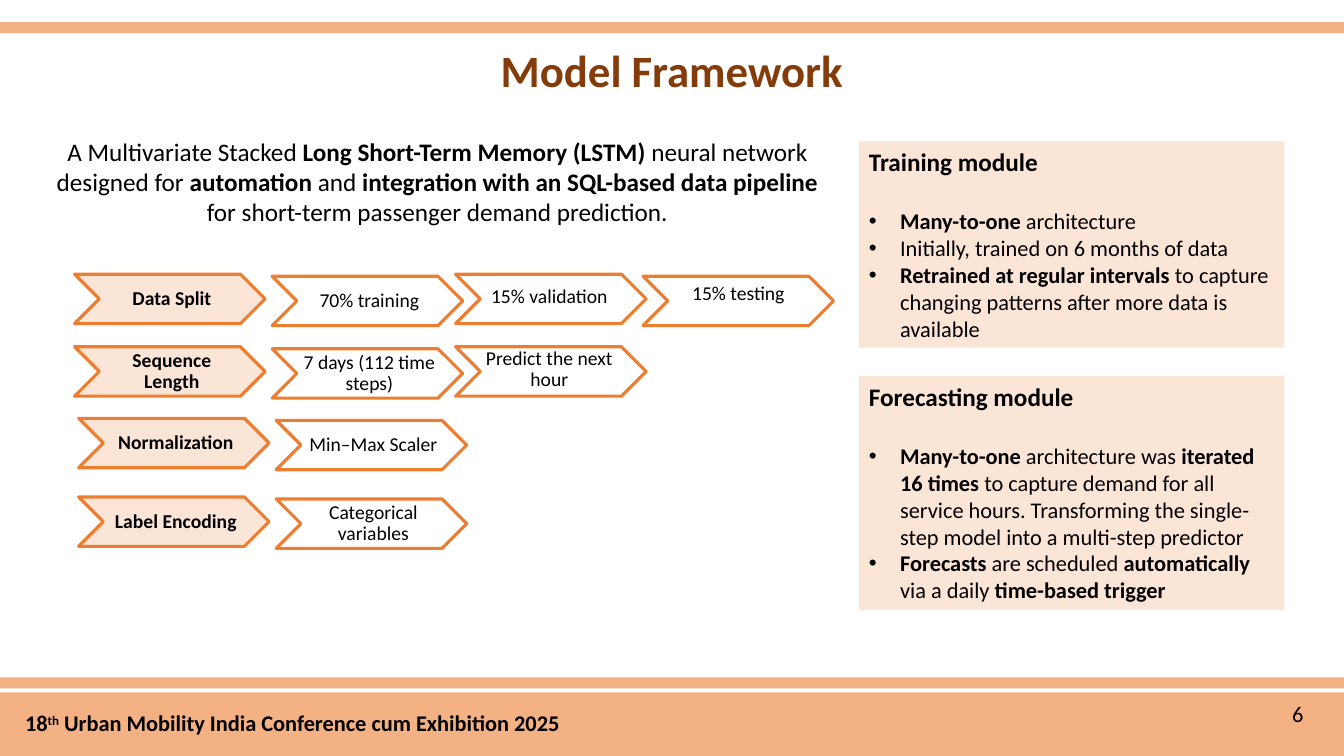
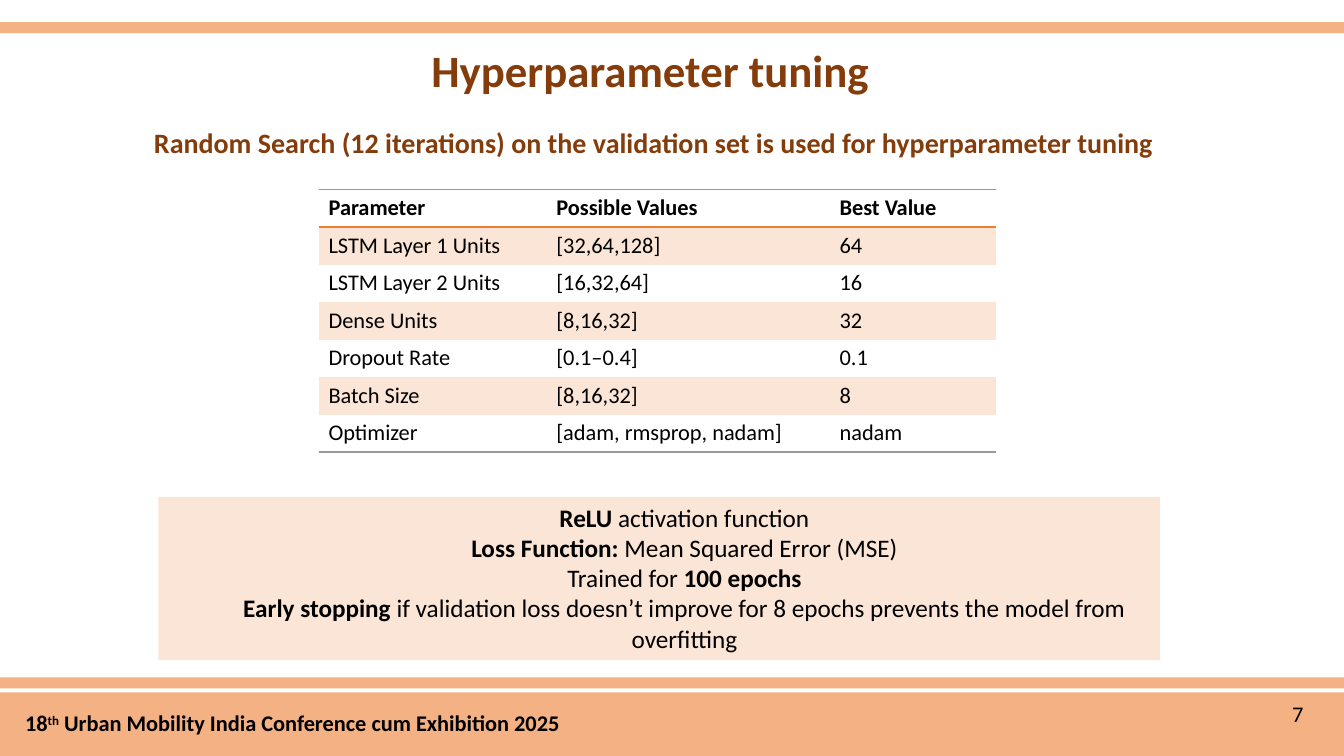
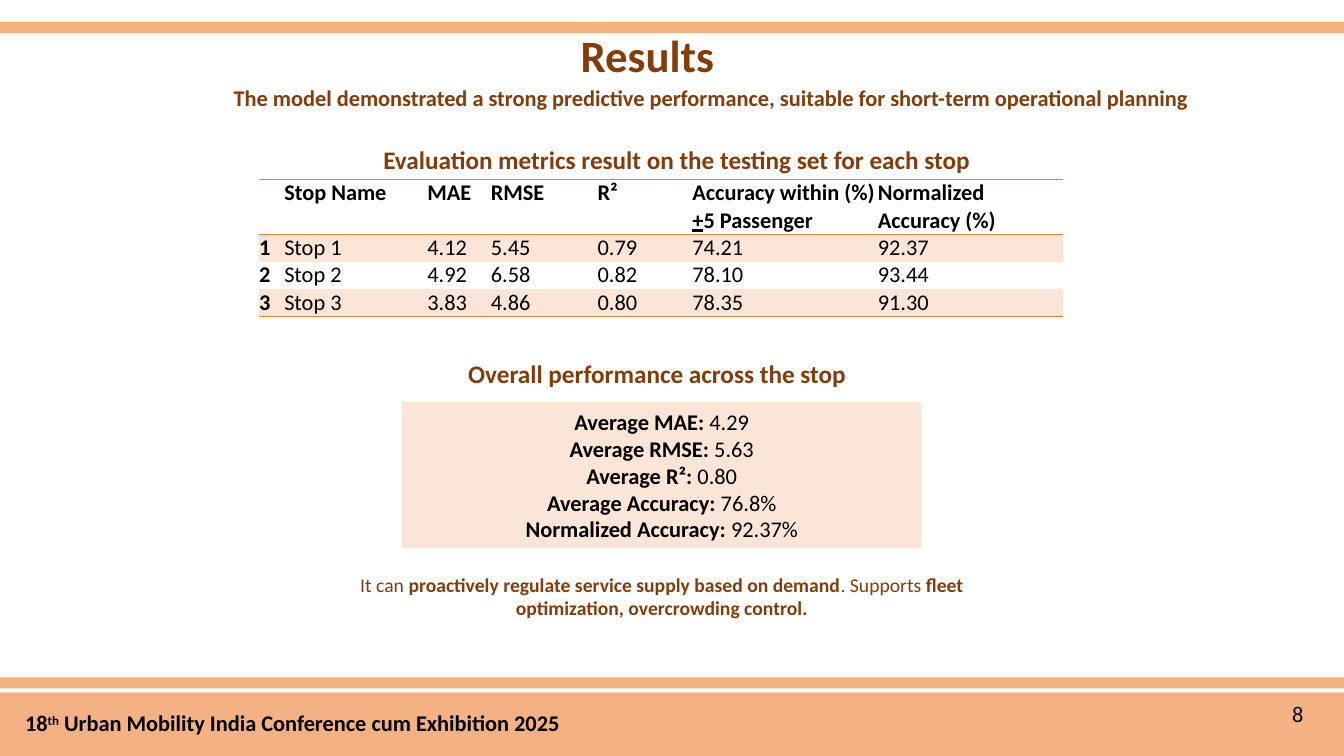
from dataclasses import dataclass
from itertools import groupby

from lxml.etree import SubElement
from pptx import Presentation
from pptx.dml.color import RGBColor
from pptx.enum.shapes import MSO_SHAPE
from pptx.enum.text import MSO_ANCHOR, MSO_AUTO_SIZE, PP_ALIGN
from pptx.oxml.ns import qn
from pptx.util import Emu, Pt

SCALE = 9144
PLAIN_GRID = "{2D5ABB26-0587-4C30-8999-92F81FD0307C}"
LEFT, MID = PP_ALIGN.LEFT, PP_ALIGN.CENTER
TOP, HALF = MSO_ANCHOR.TOP, MSO_ANCHOR.MIDDLE
INSET = (10, 5, 10, 5)


@dataclass(frozen=True)
class Theme:
    font: str = "Calibri"
    ink: str = "000000"
    brown: str = "843C0B"
    orange: str = "ED7D31"
    band: str = "F4B183"
    pale: str = "FBE5D6"
    white: str = "FFFFFF"
    gray: str = "999999"
    head: int = 32
    sub: int = 20
    lead: int = 18
    text: int = 16
    small: int = 14


THEME = Theme()


def px(n):
    return Emu(int(n * SCALE))


def box(at):
    return [px(n) for n in at]


def paint(fill, color):
    fill.solid()
    fill.fore_color.rgb = RGBColor.from_string(color)


def write(frame, text, size=THEME.text, color=THEME.ink, bold=False, align=LEFT,
          anchor=TOP, inset=INSET, spacing=1.0, after=0, indent=0, hang=0,
          bullet=None, more=False):
    """Marks in text: * toggles bold, ^ superscript, _ underline."""
    if inset and not more:
        frame.word_wrap = True
        frame.auto_size = MSO_AUTO_SIZE.NONE
        frame.vertical_anchor = anchor
        (frame.margin_left, frame.margin_top,
         frame.margin_right, frame.margin_bottom) = box(inset)
    for i, line in enumerate(text.split("\n")):
        par = frame.add_paragraph() if more or i else frame.paragraphs[0]
        par.alignment = align
        par.line_spacing = spacing
        par.space_before, par.space_after = Pt(0), Pt(after)
        props = par._p.get_or_add_pPr()
        props.set("marL", str(px(indent)))
        props.set("indent", str(px(-hang)))
        if bullet:
            SubElement(props, qn("a:buFont")).set("typeface", "Arial")
            SubElement(props, qn("a:buChar")).set("char", bullet)
        else:
            SubElement(props, qn("a:buNone"))
        marks = {"*": bold, "^": False, "_": False}
        for is_mark, chars in groupby(line, lambda c: c in marks):
            if is_mark:
                for mark in chars:
                    marks[mark] = not marks[mark]
                continue
            run = par.add_run()
            run.text = "".join(chars)
            font = run.font
            font.name, font.size = THEME.font, Pt(size)
            font.bold, font.underline = marks["*"], marks["_"]
            font.color.rgb = RGBColor.from_string(color)
            if marks["^"]:
                run._r.get_or_add_rPr().set("baseline", "30000")


def edge(cell, side, color):
    line = SubElement(cell._tc.get_or_add_tcPr(), qn(f"a:ln{side}"), w="12700")
    fill = SubElement(line, qn("a:solidFill"))
    SubElement(fill, qn("a:srgbClr")).set("val", color)


class Deck:
    def __init__(self, theme):
        self.theme = theme
        self.show = Presentation()
        self.show.slide_width, self.show.slide_height = px(1333.33), px(750)
        self.slide = None

    def page(self, number, layout, title, at, align=LEFT):
        self.slide = self.show.slides.add_slide(self.show.slide_layouts[layout])
        for top, height in ((672, 11), (687, 63), (22, 11)):
            self.shape(MSO_SHAPE.RECTANGLE, (0, top, 1333.33, height), self.theme.band)
        self.label("18^th^ Urban Mobility India Conference cum Exhibition 2025",
                   (15, 699, 1198, 37), bold=True)
        self.label(str(number), (1272, 690, 46, 37))
        self.place(self.slide.shapes.title, at)
        write(self.slide.shapes.title.text_frame, title, size=self.theme.head,
              color=self.theme.brown, bold=True, align=align)

    def place(self, item, at):
        item.left, item.top, item.width, item.height = box(at)

    def shape(self, kind, at, fill, line=None):
        item = self.slide.shapes.add_shape(kind, *box(at))
        item.shadow.inherit = False
        paint(item.fill, fill)
        if line:
            paint(item.line.fill, line)
            item.line.width = Pt(2.25)
        else:
            item.line.fill.background()
        return item

    def label(self, text, at, **style):
        item = self.slide.shapes.add_textbox(*box(at))
        write(item.text_frame, text, **style)

    def caption(self, text, at, **style):
        self.label(text, at, color=self.theme.brown, align=MID, **style)

    def panel(self, slot, at, text, **style):
        item = self.slide.placeholders[slot]
        self.place(item, at)
        paint(item.fill, self.theme.pale)
        write(item.text_frame, text, **style)
        return item.text_frame

    def module(self, slot, at, head, points):
        frame = self.panel(slot, at, head, size=self.theme.lead, bold=True, after=22)
        write(frame, points, bullet="•", indent=31, hang=31, more=True)

    def arrow(self, text, left, top, first, **style):
        fill = self.theme.pale if first else self.theme.white
        item = self.shape(MSO_SHAPE.CHEVRON, (left, top, 189, 49), fill, self.theme.orange)
        write(item.text_frame, text, size=self.theme.small, bold=first, align=MID, **style)

    def table(self, at, widths, heights, rows, rim, inset):
        holder = self.slide.shapes.add_table(len(rows), len(widths), *box(at))
        for style in holder._element.iter(qn("a:tableStyleId")):
            style.text = PLAIN_GRID
        grid = holder.table
        for col, width in zip(grid.columns, widths):
            col.width = px(width)
        for r, (row, height) in enumerate(zip(rows, heights)):
            grid.rows[r].height = px(height)
            for c, text in enumerate(row):
                cell = grid.cell(r, c)
                (cell.margin_left, cell.margin_top,
                 cell.margin_right, cell.margin_bottom) = box(inset)
                if r == 0:
                    edge(cell, "T", rim)
                    edge(cell, "B", self.theme.orange)
                elif r == len(rows) - 1:
                    edge(cell, "B", rim)
                if r % 2:
                    paint(cell.fill, self.theme.pale)
                else:
                    cell.fill.background()
                if text:
                    write(cell.text_frame, text, bold=r == 0, inset=None)


def frame_page(deck):
    deck.page(6, 3, "Model Framework", (418, 37, 497, 64), align=MID)
    deck.label("A Multivariate Stacked *Long Short-Term Memory (LSTM)* neural network "
               "designed for *automation* and *integration with an SQL-based data "
               "pipeline *for short-term passenger demand prediction.",
               (41, 130, 786, 101), size=THEME.lead, align=MID)
    steps = (
        (74, 272, ("Data Split", "70% training", "15% validation", "15% testing")),
        (74, 344, ("Sequence Length", "7 days (112 time steps)", "Predict the next hour")),
        (78, 415, ("Normalization", "Min–Max Scaler")),
        (78, 493, ("Label Encoding", "Categorical variables")),
    )
    near = dict(anchor=HALF, inset=(6, 2, 2, 2), spacing=0.9)
    styles = (near, near, near | dict(inset=(1, 2, 4, 6)), {})
    for left, top, names in steps:
        for i, (name, shift, style) in enumerate(zip(names, (0, 196, 378, 564), styles)):
            deck.arrow(name, left + shift, top + i % 2 * 2, i == 0, **style)
    deck.module(1, (852, 140, 422, 205), "Training module",
                "*Many-to-one* architecture\n"
                "Initially, trained on 6 months of data\n"
                "*Retrained at regular intervals *to capture changing patterns "
                "after more data is available")
    deck.module(2, (852, 373, 422, 232), "Forecasting module",
                "*Many-to-one* architecture was *iterated 16 times* to capture demand "
                "for all service hours. Transforming the single-step model into a "
                "multi-step predictor\n"
                "*Forecasts* are scheduled *automatically *via a daily *time-based trigger*")


def tuning_page(deck):
    deck.page(7, 1, "Hyperparameter tuning", (418, 37, 497, 64))
    deck.caption("Random Search (12 iterations) on the validation set is used for "
                 "hyperparameter tuning", (88, 120, 1071, 44),
                 size=THEME.sub, bold=True, indent=50)
    rows = (
        ("Parameter", "Possible Values", "Best Value"),
        ("LSTM Layer 1 Units", "[32,64,128]", "64"),
        ("LSTM Layer 2 Units", "[16,32,64]", "16"),
        ("Dense Units", "[8,16,32]", "32"),
        ("Dropout Rate", "[0.1–0.4]", "0.1"),
        ("Batch Size", "[8,16,32]", "8"),
        ("Optimizer", "[adam, rmsprop, nadam]", "nadam"),
    )
    deck.table((316, 188, 672, 259), (226, 281, 165), [37] * 7, rows, THEME.gray, INSET)
    deck.panel(1, (157, 493, 994, 162),
               "*ReLU* activation function\n"
               "*Loss Function:* Mean Squared Error (MSE)\n"
               "Trained for *100 epochs*\n"
               "*Early stopping* if validation loss doesn’t improve for 8 epochs "
               "prevents the model from overfitting",
               size=THEME.lead, align=MID, indent=50)


def result_page(deck):
    deck.page(8, 1, "Results", (566, 22, 236, 64))
    deck.caption("The model demonstrated a strong predictive performance, suitable for "
                 "short-term operational planning", (164, 79, 1083, 64), bold=True)
    for text, at in (
        ("Evaluation metrics result on the testing set for each stop", (221, 138, 871, 40)),
        ("Overall performance across the stop", (385, 351, 504, 40)),
    ):
        deck.caption(text, at, size=THEME.lead, bold=True, indent=30)
    rows = (
        ("", "Stop Name", "MAE", "RMSE", "R²", "Accuracy within (%)_+_5 Passenger",
         "Normalized Accuracy (%)"),
        ("*1*", "Stop 1", "4.12", "5.45", "0.79", "74.21", "92.37"),
        ("*2*", "Stop 2", "4.92", "6.58", "0.82", "78.10", "93.44"),
        ("*3*", "Stop 3", "3.83", "4.86", "0.80", "78.35", "91.30"),
    )
    deck.table((257, 178, 798, 133), (25, 142, 63, 106, 94, 184, 184),
               (53, 26, 26, 26), rows, THEME.orange, (0, 0, 0, 0))
    deck.panel(1, (399, 399, 515, 145),
               "*Average MAE:* 4.29\n"
               "*Average RMSE:* 5.63\n"
               "*Average R²:* 0.80\n"
               "*Average Accuracy:* 76.8%\n"
               "*Normalized Accuracy:* 92.37%",
               align=MID, anchor=HALF)
    deck.caption("It can *proactively regulate service supply based on demand*. Supports "
                 "*fleet optimization, overcrowding control.*", (339, 563, 635, 57),
                 size=THEME.small, anchor=HALF)


def main():
    deck = Deck(THEME)
    frame_page(deck)
    tuning_page(deck)
    result_page(deck)
    deck.show.save("out.pptx")


if __name__ == "__main__":
    main()
